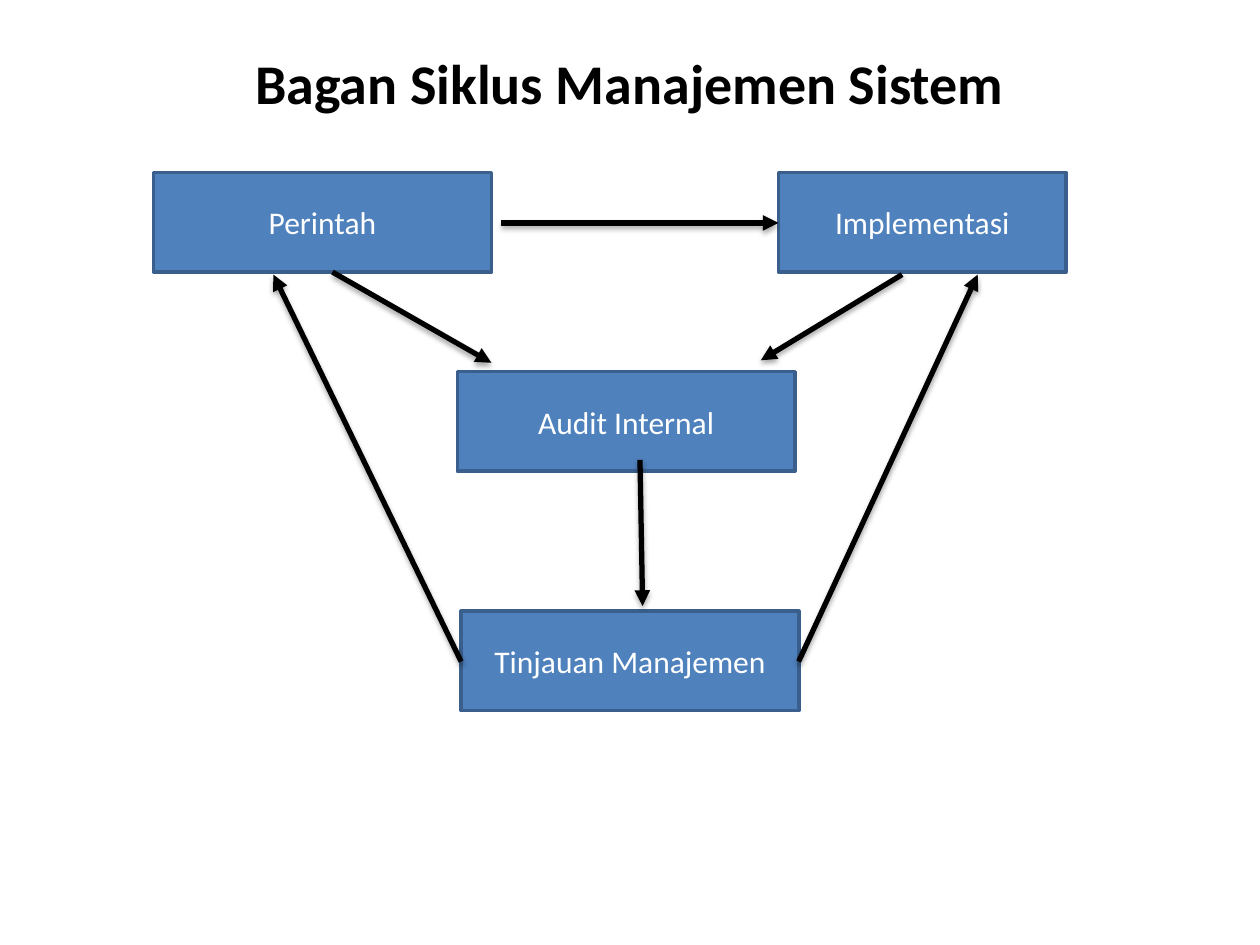
from lxml.etree import SubElement
from pptx import Presentation
from pptx.dml.color import RGBColor
from pptx.enum.shapes import MSO_CONNECTOR, MSO_SHAPE
from pptx.enum.text import MSO_ANCHOR, PP_ALIGN
from pptx.oxml.ns import qn
from pptx.util import Pt

BOX_W, BOX_H = 193, 56.9

# Offsets from the top left corner of the diagram: label, left, top, width
STEPS = [
    ("Perintah", 0, 0, BOX_W),
    ("Implementasi", 357.1, 0, 164.2),
    ("Audit Internal", 173.5, 113.8, BOX_W),
    ("Tinjauan Manajemen", 175.7, 250.6, BOX_W),
]
# Start and end of each arrow
ARROWS = [
    (198.7, 28.8, 357.1, 28.8),
    (102.2, 56.9, 193, 108.7),
    (427.7, 58.3, 347, 107.3),
    (277.9, 164.2, 279.4, 247.7),
    (175.7, 279.4, 68.4, 58.3),
    (368.6, 279.4, 470.9, 58.3),
]


def rgb(value):
    return RGBColor.from_string(value)


def set_text(tf, text, size, color, anchor, bold=False):
    tf.word_wrap = True
    tf.vertical_anchor = anchor
    tf.text = text
    p = tf.paragraphs[0]
    p.alignment = PP_ALIGN.CENTER
    f = p.runs[0].font
    f.name, f.size, f.bold = "Calibri", Pt(size), bold
    f.color.rgb = rgb(color)


def add_title(slide, left, top, width, height):
    tf = slide.shapes.add_textbox(Pt(left), Pt(top), Pt(width), Pt(height)).text_frame
    tf.margin_top = Pt(6)
    set_text(tf, "Bagan Siklus Manajemen Sistem", 32, "000000", MSO_ANCHOR.TOP, bold=True)


def add_step(slide, label, left, top, width):
    sp = slide.shapes.add_shape(MSO_SHAPE.RECTANGLE, Pt(left), Pt(top), Pt(width), Pt(BOX_H))
    sp.shadow.inherit = False
    sp.fill.solid()
    sp.fill.fore_color.rgb = rgb("4F81BD")
    sp.line.color.rgb = rgb("3A5F8C")
    sp.line.width = Pt(2)
    set_text(sp.text_frame, label, 18, "FFFFFF", MSO_ANCHOR.MIDDLE)


def add_arrow(slide, x1, y1, x2, y2):
    """Draw a black arrow with a soft shadow below it."""
    cxn = slide.shapes.add_connector(MSO_CONNECTOR.STRAIGHT, Pt(x1), Pt(y1), Pt(x2), Pt(y2))
    cxn.line.color.rgb = rgb("000000")
    cxn.line.width = Pt(3)
    SubElement(cxn.line._get_or_add_ln(), qn("a:tailEnd"), type="triangle")
    effects = SubElement(cxn._element.spPr, qn("a:effectLst"))
    shadow = SubElement(effects, qn("a:outerShdw"), blurRad=str(Pt(3.1)),
                        dist=str(Pt(1.8)), dir="5400000", rotWithShape="0")
    clr = SubElement(shadow, qn("a:srgbClr"), val="000000")
    SubElement(clr, qn("a:alpha"), val="35000")


def add_cycle(slide, left, top):
    for label, x, y, width in STEPS:
        add_step(slide, label, left + x, top + y, width)
    for x1, y1, x2, y2 in ARROWS:
        add_arrow(slide, left + x1, top + y1, left + x2, top + y2)


def main():
    prs = Presentation()
    prs.slide_width, prs.slide_height = Pt(720), Pt(540)
    slide = prs.slides.add_slide(prs.slide_layouts[6])
    add_title(slide, 36, 21.6, 648, 67)
    add_cycle(slide, 87.8, 98.6)
    prs.save("out.pptx")


if __name__ == "__main__":
    main()
